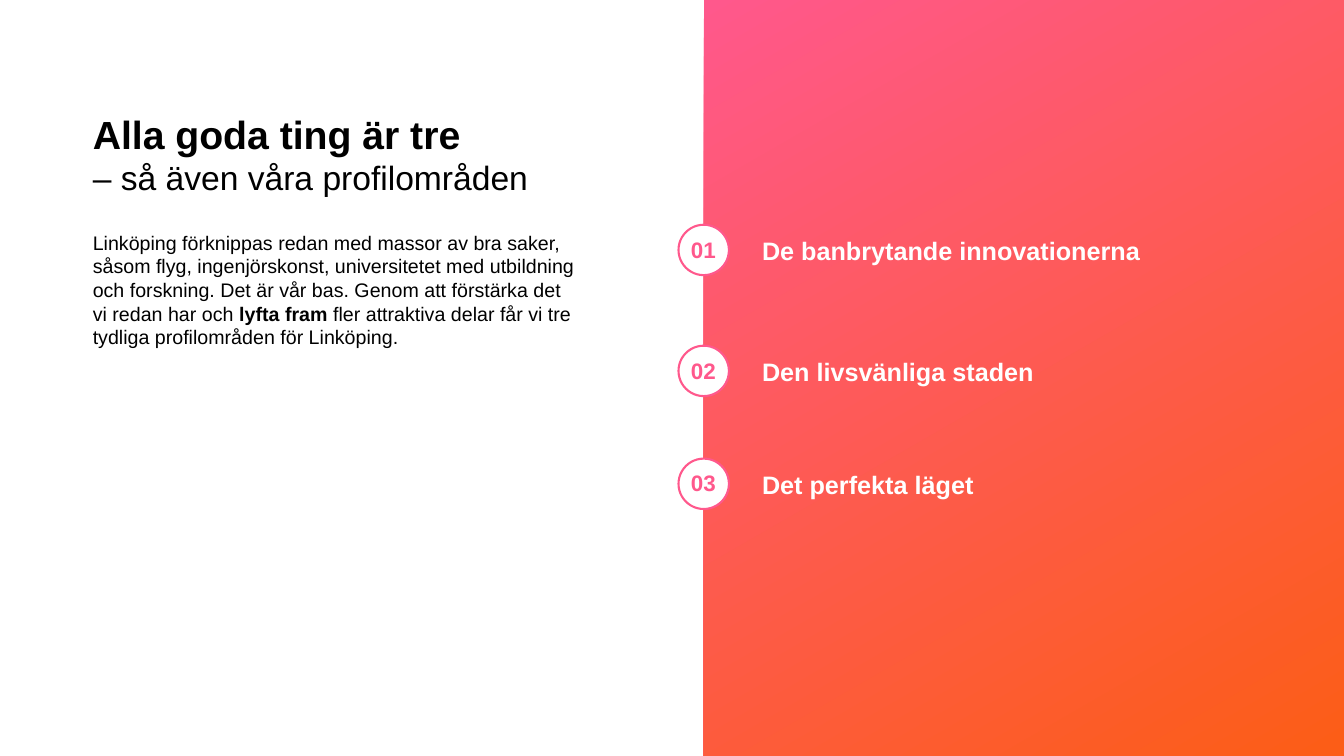
from dataclasses import dataclass

from pptx import Presentation
from pptx.dml.color import RGBColor
from pptx.enum.shapes import MSO_SHAPE
from pptx.enum.text import MSO_ANCHOR, MSO_AUTO_SIZE, PP_ALIGN
from pptx.oxml.ns import qn
from pptx.util import Inches, Pt


@dataclass(frozen=True)
class Theme:
    font: str = "Arial"
    pink: RGBColor = RGBColor(0xFF, 0x58, 0x8C)
    orange: RGBColor = RGBColor(0xFC, 0x5D, 0x17)
    black: RGBColor = RGBColor(0, 0, 0)
    white: RGBColor = RGBColor(0xFF, 0xFF, 0xFF)
    title: int = 28
    subtitle: int = 24
    area: int = 18
    number: int = 16
    body: int = 14


THEME = Theme()

# Number, label and circle top of each profile area
AREAS = [
    ("01", "De banbrytande innovationerna", 2.23),
    ("02", "Den livsvänliga staden", 3.43),
    ("03", "Det perfekta läget", 4.55),
]


def place(shape, left, top, width, height):
    shape.left, shape.top = Inches(left), Inches(top)
    shape.width, shape.height = Inches(width), Inches(height)


def write(shape, runs, color, align=PP_ALIGN.LEFT):
    """Fill one paragraph with (text, size, bold) runs; None is a line break."""
    frame_format = {
        "word_wrap": True,
        "auto_size": MSO_AUTO_SIZE.NONE,
        "vertical_anchor": MSO_ANCHOR.TOP,
    }
    for name, value in frame_format.items():
        setattr(shape.text_frame, name, value)
    paragraph = shape.text_frame.paragraphs[0]
    paragraph.alignment = align
    paragraph.space_before = Pt(0)
    for part in runs:
        if part is None:
            paragraph.add_line_break()
            continue
        text, size, bold = part
        run = paragraph.add_run()
        run.text = text
        font_format = {"name": THEME.font, "size": Pt(size), "bold": bold}
        for name, value in font_format.items():
            setattr(run.font, name, value)
        run.font.color.rgb = color
    return paragraph


def remove_bullet(paragraph):
    properties = paragraph._p.get_or_add_pPr()
    properties.set("marL", "0")
    properties.set("indent", "0")
    properties.append(properties.makeelement(qn("a:buNone"), {}))


def add_label(slide, box, text, size, color, align=PP_ALIGN.LEFT):
    label = slide.shapes.add_textbox(*map(Inches, box))
    write(label, [(text, size, True)], color, align)


def add_panel(slide):
    panel = slide.shapes.add_shape(
        MSO_SHAPE.RECTANGLE, Inches(6.98), 0, Inches(6.35), Inches(7.5))
    panel.shadow.inherit = False
    panel.line.fill.background()
    panel.fill.gradient()
    panel.fill.gradient_angle = 300
    stops = panel.fill.gradient_stops
    for stop, color, position in zip(stops, (THEME.pink, THEME.orange), (0, 0.99)):
        stop.color.rgb = color
        stop.position = position


def add_area(slide, number, label, top):
    add_label(slide, (7.46, top + 0.06, 4.6, 0.4), label, THEME.area, THEME.white)
    circle = slide.shapes.add_shape(
        MSO_SHAPE.OVAL, Inches(6.73), Inches(top), Inches(0.5), Inches(0.5))
    circle.shadow.inherit = False
    circle.fill.solid()
    circle.fill.fore_color.rgb = THEME.white
    circle.line.color.rgb = THEME.pink
    circle.line.width = Pt(1.5)
    add_label(slide, (6.75, top + 0.06, 0.45, 0.37), number,
              THEME.number, THEME.pink, PP_ALIGN.CENTER)


def main():
    deck = Presentation()
    deck.slide_width, deck.slide_height = Inches(13.33), Inches(7.5)
    slide = deck.slides.add_slide(deck.slide_layouts[1])

    # Title and introduction
    title, intro = slide.placeholders
    place(title, 0.82, 1.04, 6.36, 0.98)
    write(title, [
        ("Alla goda ting är tre", THEME.title, True),
        None,
        ("– så även våra profilområden", THEME.subtitle, False),
    ], THEME.black)
    place(intro, 0.82, 2.24, 5.03, 1.28)
    intro_paragraph = write(intro, [
        ("Linköping förknippas redan med massor av bra saker, såsom flyg, "
         "ingenjörskonst, universitetet med utbildning och forskning. Det är "
         "vår bas. Genom att förstärka det vi redan har och ", THEME.body, False),
        ("lyfta fram ", THEME.body, True),
        ("fler attraktiva delar får vi tre tydliga profilområden för Linköping.",
         THEME.body, False),
    ], THEME.black)
    remove_bullet(intro_paragraph)

    # Gradient panel with the three profile areas
    add_panel(slide)
    for number, label, top in AREAS:
        add_area(slide, number, label, top)

    deck.save("out.pptx")


if __name__ == "__main__":
    main()
